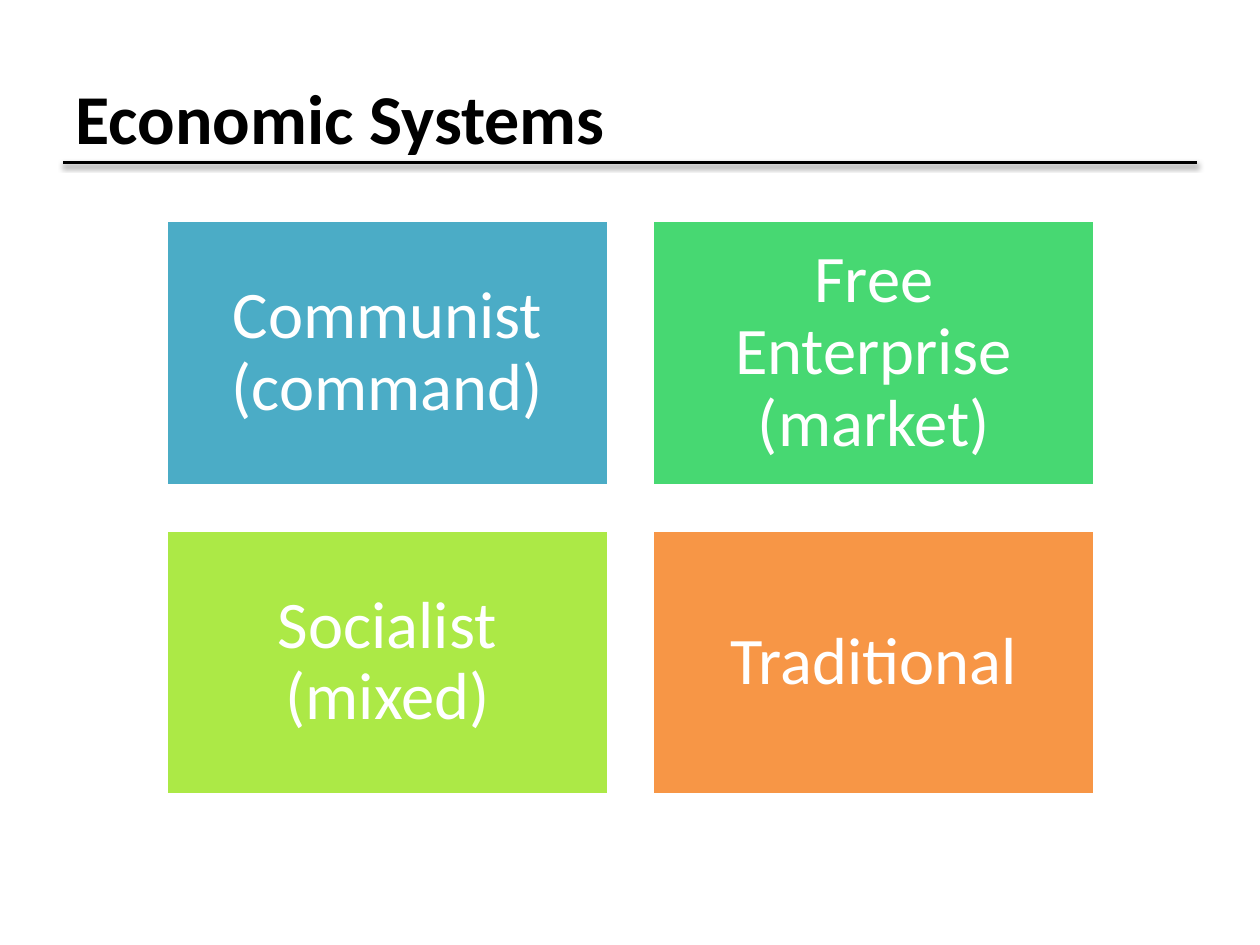
import dataclasses

import pptx
import pptx.dml.color
import pptx.enum.shapes
import pptx.enum.text
import pptx.oxml
import pptx.oxml.ns
import pptx.util
from pptx.util import Inches


@dataclasses.dataclass(frozen=True)
class Theme:
    """Colours, font and type sizes of the slide."""
    font: str = "Calibri"
    ink: str = "000000"
    paper: str = "FFFFFF"
    blue: str = "4BACC6"
    green: str = "47D872"
    lime: str = "ACE946"
    orange: str = "F79646"
    title_size: int = 40
    tile_size: int = 38
    line_width: int = 2


THEME = Theme()
SYSTEMS = [
    ("Communist (command)", THEME.blue),
    ("Free Enterprise (market)", THEME.green),
    ("Socialist (mixed)", THEME.lime),
    ("Traditional", THEME.orange),
]


def rgb(value):
    """Turn a hex string into a colour."""
    return pptx.dml.color.RGBColor.from_string(value)


def add_span(para, text, size, color, bold=False):
    """Add one formatted run to a paragraph."""
    span = para.add_run()
    span.text = text
    span.font.name = THEME.font
    span.font.size = pptx.util.Pt(size)
    span.font.bold = bold
    span.font.color.rgb = rgb(color)


def place_title(page, text, left, top, width, height):
    """Move the title placeholder into its box and fill it."""
    title = page.shapes.title
    title.left, title.top, title.width, title.height = left, top, width, height
    title.text_frame.word_wrap = True
    title.text_frame.vertical_anchor = pptx.enum.text.MSO_ANCHOR.MIDDLE
    para = title.text_frame.paragraphs[0]
    para.alignment = pptx.enum.text.PP_ALIGN.LEFT
    add_span(para, text, THEME.title_size, THEME.ink, bold=True)


def add_title_rule(page, left, top, width):
    """Draw the rule under the title with its soft shadow."""
    rule = page.shapes.add_connector(
        pptx.enum.shapes.MSO_CONNECTOR.STRAIGHT, left, top, left + width, top)
    rule.line.color.rgb = rgb(THEME.ink)
    rule.line.width = pptx.util.Pt(THEME.line_width)
    blur, distance = pptx.util.Pt(3.1), pptx.util.Pt(1.6)
    rule.element.spPr.append(pptx.oxml.parse_xml(
        f'<a:effectLst {pptx.oxml.ns.nsdecls("a")}>'
        f'<a:outerShdw blurRad="{blur}" dist="{distance}" dir="5400000" rotWithShape="0">'
        f'<a:srgbClr val="{THEME.ink}"><a:alpha val="38000"/></a:srgbClr>'
        '</a:outerShdw></a:effectLst>'))


def add_tile(page, text, color, left, top, width, height):
    """Add one coloured tile with centred text."""
    tile = page.shapes.add_shape(
        pptx.enum.shapes.MSO_SHAPE.RECTANGLE, left, top, width, height)
    tile.shadow.inherit = False
    tile.fill.solid()
    tile.fill.fore_color.rgb = rgb(color)
    tile.line.color.rgb = rgb(THEME.paper)
    tile.line.width = pptx.util.Pt(THEME.line_width)
    frame = tile.text_frame
    frame.word_wrap = True
    frame.vertical_anchor = pptx.enum.text.MSO_ANCHOR.MIDDLE
    frame.margin_left = frame.margin_right = Inches(0.16)
    frame.margin_top = frame.margin_bottom = Inches(0.16)
    para = frame.paragraphs[0]
    para.alignment = pptx.enum.text.PP_ALIGN.CENTER
    para.line_spacing = 0.9
    add_span(para, text, THEME.tile_size, THEME.paper)


def add_tile_grid(page, systems, left, top, width, height, gap, columns=2):
    """Lay the tiles out in an evenly spaced grid."""
    rows = -(-len(systems) // columns)
    tile_width = (width - gap * (columns - 1)) // columns
    tile_height = (height - gap * (rows - 1)) // rows
    for index, (text, color) in enumerate(systems):
        row, column = divmod(index, columns)
        add_tile(page, text, color,
                 left + column * (tile_width + gap),
                 top + row * (tile_height + gap),
                 tile_width, tile_height)


def main():
    """Build and save the slide."""
    deck = pptx.Presentation()
    deck.slide_width, deck.slide_height = Inches(10), Inches(7.5)
    page = deck.slides.add_slide(deck.slide_layouts.get_by_name("Title Only"))
    add_title_rule(page, Inches(0.5), Inches(1.29), Inches(9))
    place_title(page, "Economic Systems",
                Inches(0.5), Inches(0.3), Inches(9), Inches(1.25))
    add_tile_grid(page, SYSTEMS, Inches(1.32), Inches(1.75),
                  Inches(7.37), Inches(4.56), Inches(0.35))
    deck.save("out.pptx")


if __name__ == "__main__":
    main()
